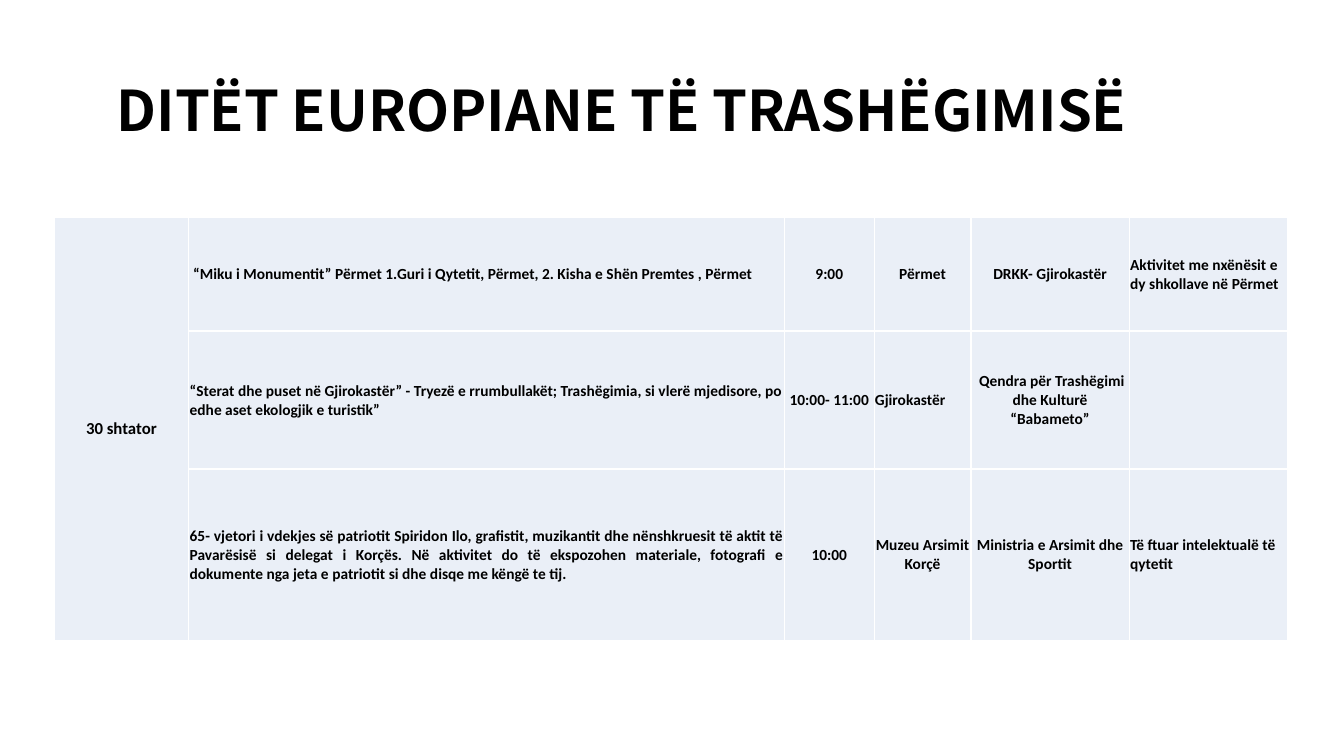
from lxml.etree import SubElement
from pptx import Presentation
from pptx.dml.color import RGBColor
from pptx.enum.text import MSO_ANCHOR, PP_ALIGN
from pptx.oxml.ns import qn
from pptx.util import Cm, Pt

BLACK = RGBColor(0x00, 0x00, 0x00)
WHITE = RGBColor(0xFF, 0xFF, 0xFF)
PALE_BLUE = RGBColor(0xEA, 0xEF, 0xF7)

LEFT, CENTER, JUSTIFY = PP_ALIGN.LEFT, PP_ALIGN.CENTER, PP_ALIGN.JUSTIFY

TITLE = "DITËT EUROPIANE TË TRASHËGIMISË"
DATE = "30 shtator"
EVENTS = [
    [
        (" “Miku i Monumentit” Përmet 1.Guri i Qytetit, Përmet, 2. Kisha e Shën Premtes , Përmet", LEFT),
        ("9:00", CENTER),
        ("Përmet", CENTER),
        ("DRKK- Gjirokastër", CENTER),
        ("Aktivitet me nxënësit e dy shkollave në Përmet", LEFT),
    ],
    [
        ("“Sterat dhe puset në Gjirokastër” - Tryezë e rrumbullakët; Trashëgimia, si vlerë mjedisore, "
         "po edhe aset ekologjik e turistik”", LEFT),
        ("10:00- 11:00", CENTER),
        ("Gjirokastër", LEFT),
        (" Qendra për Trashëgimi dhe Kulturë “Babameto”", CENTER),
        ("", LEFT),
    ],
    [
        ("65- vjetori i vdekjes së patriotit Spiridon Ilo, grafistit, muzikantit dhe nënshkruesit të aktit të "
         "Pavarësisë si delegat i Korçës. Në aktivitet do të ekspozohen materiale, fotografi e dokumente "
         "nga jeta e patriotit si dhe disqe me këngë te tij.", JUSTIFY),
        ("10:00", CENTER),
        ("Muzeu Arsimit Korçë", CENTER),
        ("Ministria e Arsimit dhe Sportit", CENTER),
        ("Të ftuar intelektualë të qytetit", LEFT),
    ],
]
COLUMN_WIDTHS = [3.4, 15.01, 2.26, 2.44, 3.99, 3.99]
ROW_HEIGHTS = [2.87, 3.48, 4.32]
CELL_MARGIN = Cm(0.02)


def write(frame, text, size=11, font="Calibri", align=LEFT, spacing=1.0):
    paragraph = frame.paragraphs[0]
    paragraph.alignment = align
    paragraph.line_spacing = spacing
    paragraph.font.size = Pt(size)
    if text:
        run = paragraph.add_run()
        run.text = text
        run.font.name = font
        run.font.size = Pt(size)
        run.font.bold = True
        run.font.color.rgb = BLACK


def style_cell(cell):
    """Give a cell its margins, white borders and pale fill."""
    cell.margin_left = cell.margin_right = cell.margin_top = CELL_MARGIN
    cell.margin_bottom = 0
    cell.vertical_anchor = MSO_ANCHOR.MIDDLE
    properties = cell._tc.get_or_add_tcPr()
    for side in ("a:lnL", "a:lnR", "a:lnT", "a:lnB"):
        line = SubElement(properties, qn(side), w=str(Pt(1)))
        fill = SubElement(line, qn("a:solidFill"))
        SubElement(fill, qn("a:srgbClr"), val=str(WHITE))
    cell.fill.solid()
    cell.fill.fore_color.rgb = PALE_BLUE


def add_title(slide):
    box = slide.shapes.add_textbox(Cm(2.34), Cm(1.02), Cm(29.21), Cm(3.68))
    frame = box.text_frame
    frame.word_wrap = True
    frame.vertical_anchor = MSO_ANCHOR.MIDDLE
    frame.margin_left = Cm(0.6)
    write(frame, TITLE, size=40, font="Noto Sans CJK KR", spacing=0.9)


def add_programme(slide):
    table = slide.shapes.add_table(
        len(ROW_HEIGHTS), len(COLUMN_WIDTHS), Cm(1.36), Cm(5.47),
        Cm(sum(COLUMN_WIDTHS)), Cm(sum(ROW_HEIGHTS))).table
    table.first_row = table.horz_banding = False
    for column, width in zip(table.columns, COLUMN_WIDTHS):
        column.width = Cm(width)
    for row, height in zip(table.rows, ROW_HEIGHTS):
        row.height = Cm(height)
    for cell in table.iter_cells():
        style_cell(cell)
    date_cell = table.cell(0, 0)
    date_cell.merge(table.cell(len(ROW_HEIGHTS) - 1, 0))
    write(date_cell.text_frame, DATE, size=12, align=CENTER)
    for row_index, event in enumerate(EVENTS):
        for column_index, (text, align) in enumerate(event, start=1):
            write(table.cell(row_index, column_index).text_frame, text, align=align)


def main():
    presentation = Presentation()
    presentation.slide_width = Cm(33.87)
    presentation.slide_height = Cm(19.05)
    slide = presentation.slides.add_slide(presentation.slide_layouts[6])
    add_title(slide)
    add_programme(slide)
    presentation.save("out.pptx")


if __name__ == "__main__":
    main()
